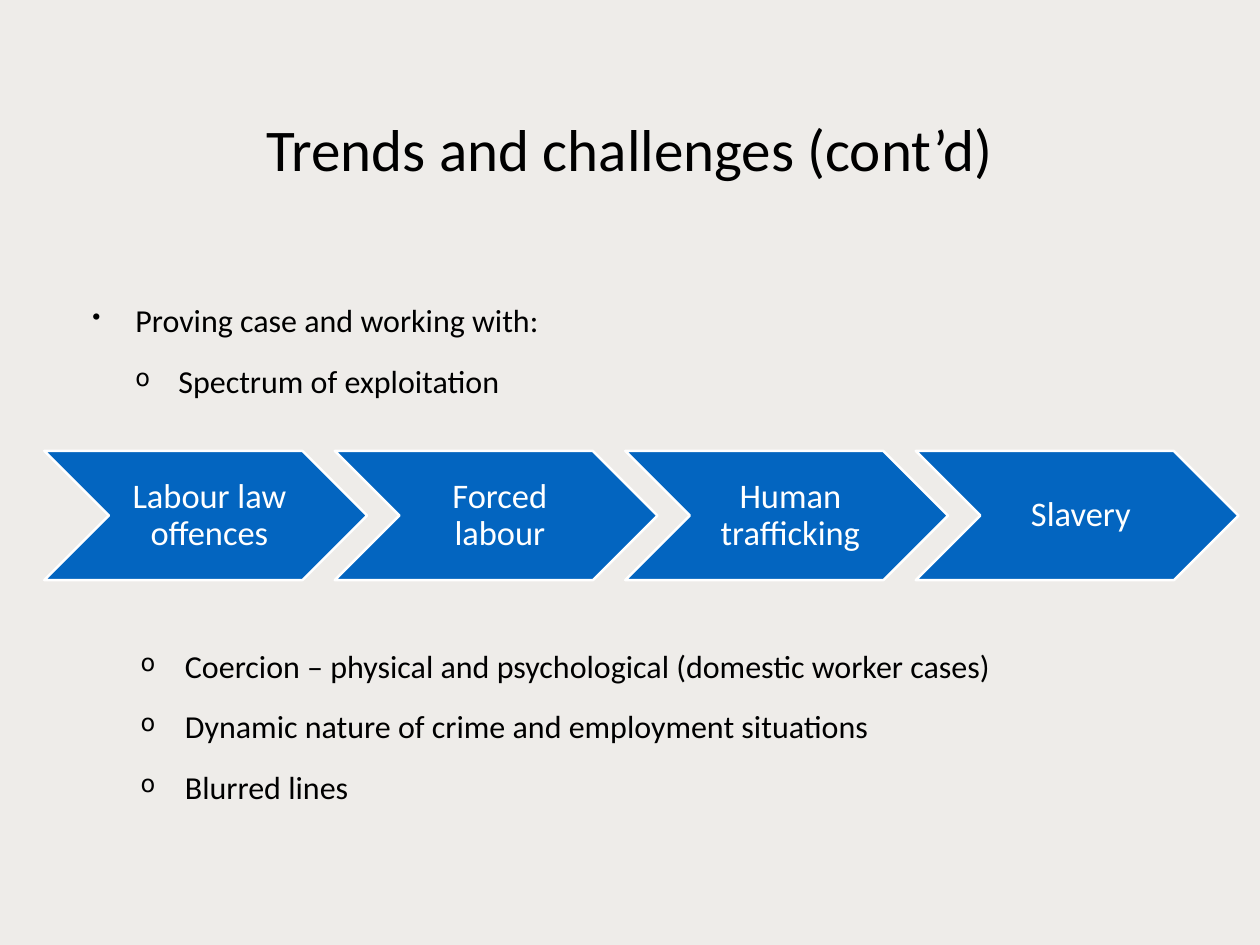
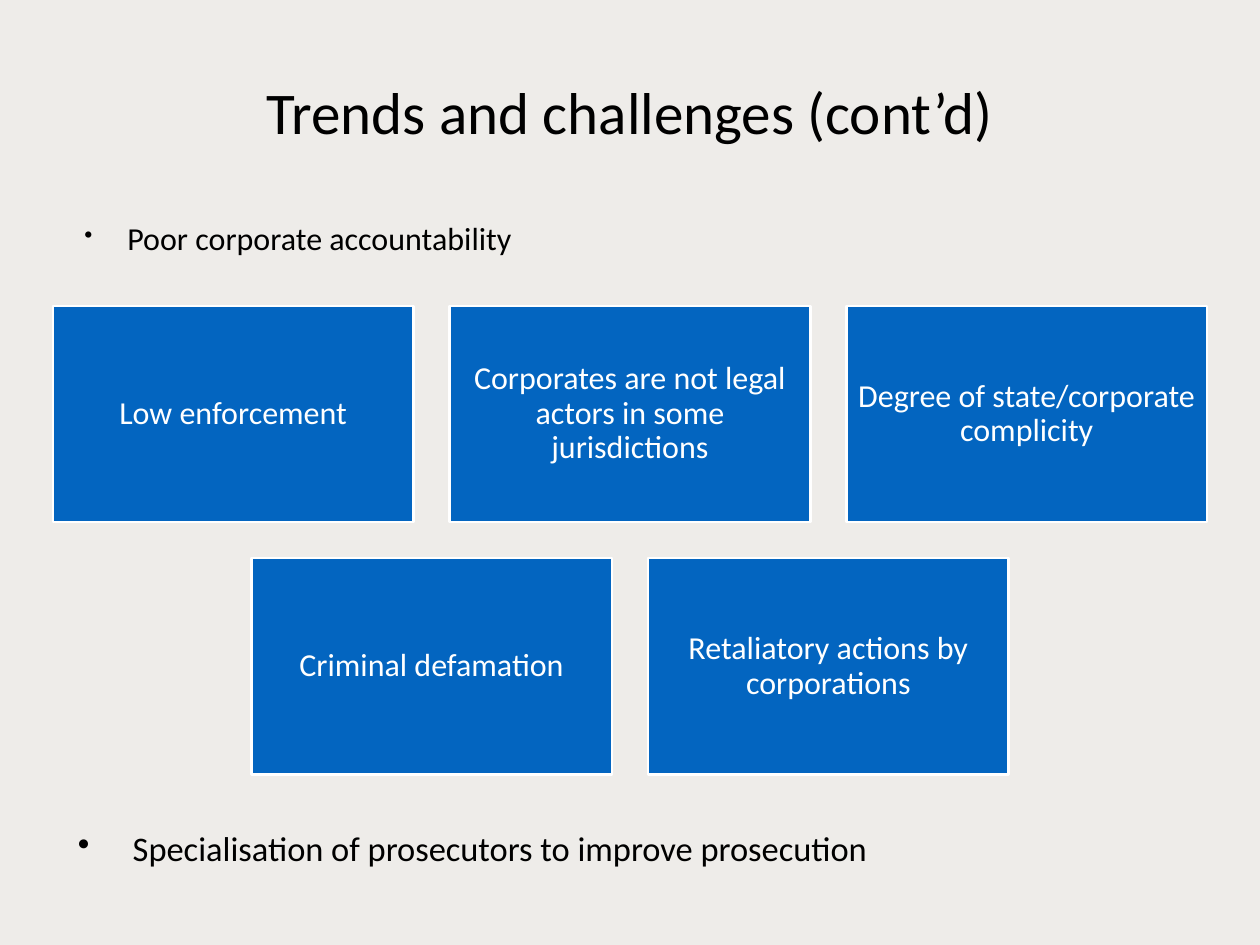
from lxml import etree
from pptx import Presentation
from pptx.dml.color import RGBColor
from pptx.enum.shapes import MSO_SHAPE
from pptx.enum.text import MSO_ANCHOR, PP_ALIGN
from pptx.oxml.ns import qn
from pptx.util import Pt

CHEVRON, RECTANGLE = MSO_SHAPE.CHEVRON, MSO_SHAPE.RECTANGLE
MIDDLE, CENTER = MSO_ANCHOR.MIDDLE, PP_ALIGN.CENTER

SLIDE_WIDTH, SLIDE_HEIGHT = 1024, 768
FONT = "Calibri"
COLORS = {"background": "EEECE9", "text": "000000", "fill": "0365C0", "light": "FFFFFF"}
TITLE = "Trends and challenges (cont’d)"
TITLE_SIZE, BODY_SIZE, LARGE_SIZE = 48, 26, 28
INDENT = 35


def color(name):
    return RGBColor.from_string(COLORS[name])


def set_frame(frame, insets):
    """Wrap and centre the text vertically; insets are left, top, right, bottom."""
    frame.word_wrap = True
    frame.vertical_anchor = MIDDLE
    left, top, right, bottom = insets
    frame.margin_left, frame.margin_top = Pt(left), Pt(top)
    frame.margin_right, frame.margin_bottom = Pt(right), Pt(bottom)


def set_text(paragraph, text, size, color_name):
    paragraph.text = text
    paragraph.font.name = FONT
    paragraph.font.size = Pt(size)
    paragraph.font.color.rgb = color(color_name)


def set_bullet(paragraph, character, level, indent, percent):
    properties = paragraph._p.get_or_add_pPr()
    properties.set("marL", str(Pt(indent * (level + 1))))
    properties.set("indent", str(-Pt(indent)))
    # Size and character must come before the default run properties
    parts = [etree.Element(qn("a:buSzPct"), val=str(percent * 1000)),
             etree.Element(qn("a:buChar"), char=character)]
    defaults = properties.find(qn("a:defRPr"))
    for part in parts:
        defaults.addprevious(part)


def add_text_box(slide, box, insets=(0, 0, 0, 0)):
    frame = slide.shapes.add_textbox(*map(Pt, box)).text_frame
    set_frame(frame, insets)
    return frame


def add_title(slide, box):
    paragraph = add_text_box(slide, box).paragraphs[0]
    paragraph.alignment = CENTER
    set_text(paragraph, TITLE, TITLE_SIZE, "text")


def add_bullets(slide, box, items, insets=(0, 0, 0, 0), size=BODY_SIZE,
                indent=INDENT, percent=75):
    """Items are (bullet, level, text)."""
    frame = add_text_box(slide, box, insets)
    for index, (character, level, text) in enumerate(items):
        paragraph = frame.add_paragraph() if index else frame.paragraphs[0]
        paragraph.space_before = Pt(18 if index else 0)
        set_text(paragraph, text, size, "text")
        set_bullet(paragraph, character, level, indent, percent)


def add_block(slide, kind, box, text, size, insets):
    shape = slide.shapes.add_shape(kind, *map(Pt, box))
    shape.shadow.inherit = False
    shape.fill.solid()
    shape.fill.fore_color.rgb = color("fill")
    shape.line.color.rgb = color("light")
    shape.line.width = Pt(2)
    set_frame(shape.text_frame, insets)
    paragraph = shape.text_frame.paragraphs[0]
    paragraph.alignment = CENTER
    paragraph.line_spacing = 0.9
    set_text(paragraph, text, size, "light")


def add_chevron_chain(slide, box, labels):
    """Equal chevrons, each overlapping the next by a tenth of its width."""
    left, top, width, height = box
    chevron_width = width / (1 + 0.9 * (len(labels) - 1))
    for index, label in enumerate(labels):
        place = (left + index * 0.9 * chevron_width, top, chevron_width, height)
        add_block(slide, CHEVRON, place, label, LARGE_SIZE, (9, 3, 3, 3))


def add_tile_rows(slide, box, rows):
    """Equal tiles in centred rows, with gaps of a tenth of a tile's width."""
    left, top, width, height = box
    columns = max(map(len, rows))
    tile_width = width / (columns + 0.1 * (columns - 1))
    gap = tile_width / 10
    tile_height = (height - gap * (len(rows) - 1)) / len(rows)
    for row_index, labels in enumerate(rows):
        row_width = len(labels) * (tile_width + gap) - gap
        row_left = left + (width - row_width) / 2
        for index, label in enumerate(labels):
            place = (row_left + index * (tile_width + gap),
                     top + row_index * (tile_height + gap), tile_width, tile_height)
            add_block(slide, RECTANGLE, place, label, BODY_SIZE, (8, 8, 8, 8))


def add_slide(presentation):
    slide = presentation.slides.add_slide(presentation.slide_layouts[6])
    slide.background.fill.solid()
    slide.background.fill.fore_color.rgb = color("background")
    return slide


def build_spectrum_slide(presentation):
    slide = add_slide(presentation)
    add_title(slide, (75, 35, 874, 170))
    add_bullets(slide, (75, 205, 874, 159), [
        ("•", 0, "Proving case and working with:"),
        ("o", 1, "Spectrum of exploitation"),
    ])
    # Spectrum from mild to severe
    add_chevron_chain(slide, (36, 366.5, 970.5, 105), [
        "Labour law offences", "Forced labour", "Human trafficking", "Slavery"])
    add_bullets(slide, (110, 511, 897, 201), [
        ("o", 0, "Coercion – physical and psychological (domestic worker cases)"),
        ("o", 0, "Dynamic nature of crime and employment situations"),
        ("o", 0, "Blurred lines"),
    ], insets=(4.3, 4.3, 4.3, 47), indent=36)


def build_accountability_slide(presentation):
    slide = add_slide(presentation)
    add_title(slide, (75, 35, 874, 111))
    add_bullets(slide, (68.5, 146, 906, 94), [("•", 0, "Poor corporate accountability")])
    # Reasons for poor accountability
    add_tile_rows(slide, (43, 248.5, 938, 381), [
        ["Low enforcement", "Corporates are not legal actors in some jurisdictions",
         "Degree of state/corporate complicity"],
        ["Criminal defamation", "Retaliatory actions by corporations"],
    ])
    add_bullets(slide, (59, 668, 947, 76),
                [("•", 0, "Specialisation of prosecutors to improve prosecution")],
                insets=(4.3, 4.3, 4.3, 38), size=LARGE_SIZE, indent=44.6, percent=100)


def main():
    presentation = Presentation()
    presentation.slide_width, presentation.slide_height = Pt(SLIDE_WIDTH), Pt(SLIDE_HEIGHT)
    build_spectrum_slide(presentation)
    build_accountability_slide(presentation)
    presentation.save("out.pptx")


if __name__ == "__main__":
    main()
